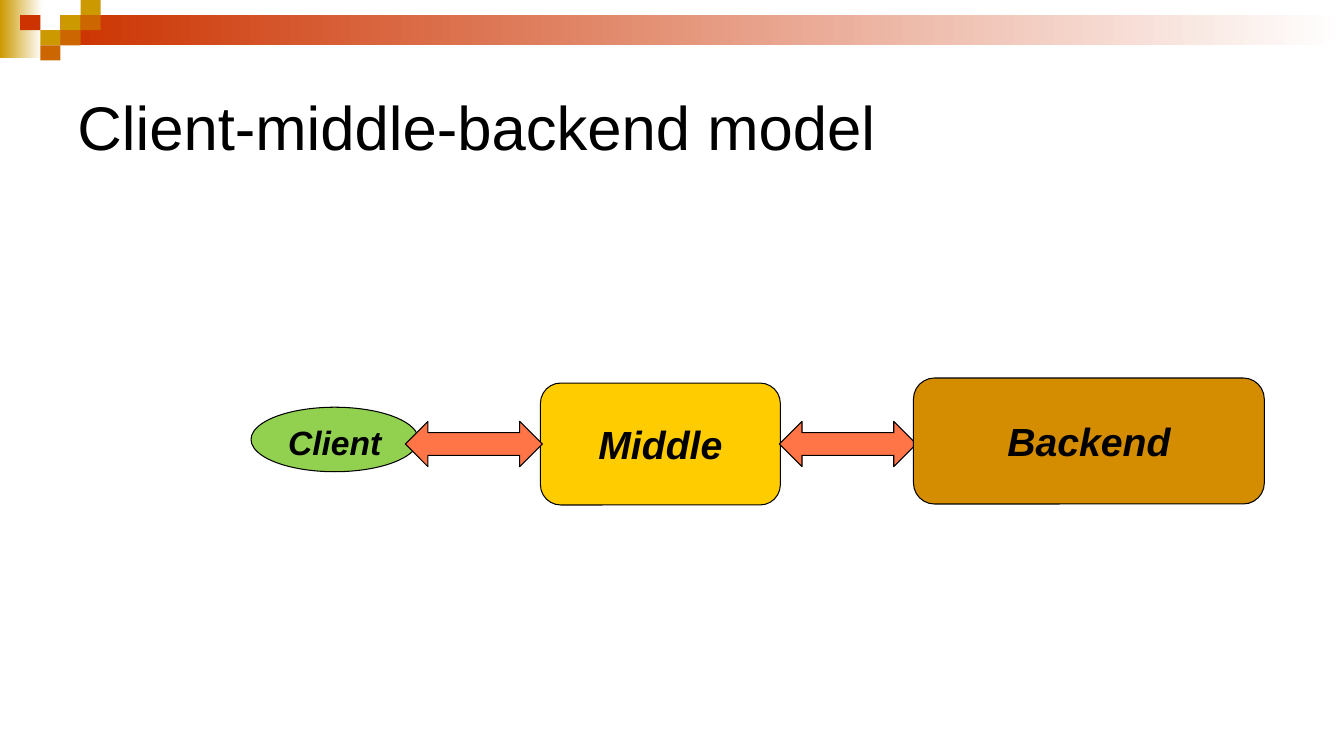
from dataclasses import dataclass

import pptx
import pptx.dml.color
import pptx.enum.shapes
import pptx.enum.text
import pptx.util

Inches = pptx.util.Inches
SHAPE = pptx.enum.shapes.MSO_SHAPE
ANCHOR = pptx.enum.text.MSO_ANCHOR
ALIGN = pptx.enum.text.PP_ALIGN


@dataclass(frozen=True)
class Theme:
    font: str = "Arial"
    black: str = "000000"
    white: str = "FFFFFF"
    gold: str = "CC9900"
    red: str = "CC3300"
    orange: str = "CC6600"
    client: str = "92D050"
    middle: str = "FFCC00"
    backend: str = "D48C00"
    arrow: str = "FF7547"
    title_size: int = 44
    tier_size: int = 28
    client_size: int = 24
    outline: float = 0.75


THEME = Theme()


def rgb(color):
    return pptx.dml.color.RGBColor.from_string(color)


def add_shape(slide, kind, box, color=None):
    sp = slide.shapes.add_shape(kind, *map(Inches, box))
    sp.shadow.inherit = False
    if color:
        sp.fill.solid()
        sp.fill.fore_color.rgb = rgb(color)
    return sp


def add_tile(slide, box, color):
    sp = add_shape(slide, SHAPE.RECTANGLE, box, color)
    sp.line.fill.background()


def add_fade(slide, box, color):
    sp = add_shape(slide, SHAPE.RECTANGLE, box)
    sp.line.fill.background()
    sp.fill.gradient()
    sp.fill.gradient_angle = 0
    for stop, shade in zip(sp.fill.gradient_stops, (color, THEME.white)):
        stop.color.rgb = rgb(shade)


def add_outlined(slide, kind, box, color):
    sp = add_shape(slide, kind, box, color)
    sp.line.color.rgb = rgb(THEME.black)
    sp.line.width = pptx.util.Pt(THEME.outline)
    return sp


def set_text(sp, text, size, align, anchor=ANCHOR.MIDDLE, strong=False):
    tf = sp.text_frame
    tf.word_wrap = True
    tf.vertical_anchor = anchor
    p = tf.paragraphs[0]
    p.text = text
    p.alignment = align
    p.font.name = THEME.font
    p.font.size = pptx.util.Pt(size)
    p.font.bold = strong
    p.font.italic = strong
    p.font.color.rgb = rgb(THEME.black)


def add_node(slide, kind, box, color, text, size, anchor=ANCHOR.MIDDLE):
    sp = add_outlined(slide, kind, box, color)
    set_text(sp, text, size, ALIGN.CENTER, anchor, strong=True)


def add_title(slide, text):
    sp = slide.shapes.add_textbox(*map(Inches, (0.67, 0.5, 12, 1.5)))
    set_text(sp, text, THEME.title_size, ALIGN.LEFT)


def add_banner(slide):
    add_fade(slide, (0, 0, 0.42, 0.58), THEME.gold)
    add_fade(slide, (0.6, 0.15, 12.73, 0.3), THEME.red)
    tile_w, tile_h = 0.2, 0.15
    tiles = (
        (3, 1, THEME.gold), (4, 0, THEME.gold), (4, 1, THEME.orange),
        (2, 2, THEME.gold), (1, 1, THEME.red), (3, 2, THEME.orange),
        (2, 3, THEME.orange),
    )
    for col, row, color in tiles:
        add_tile(slide, (col * tile_w, row * tile_h, tile_w, tile_h), color)


def main():
    prs = pptx.Presentation()
    prs.slide_width = Inches(13.33)
    prs.slide_height = Inches(7.5)
    slide = prs.slides.add_slide(prs.slide_layouts[6])

    add_banner(slide)
    add_title(slide, "Client-middle-backend model")
    add_node(slide, SHAPE.OVAL, (2.49, 4.04, 1.66, 0.64), THEME.client,
             "Client", THEME.client_size, ANCHOR.TOP)
    add_node(slide, SHAPE.ROUNDED_RECTANGLE, (5.36, 3.8, 2.38, 1.21),
             THEME.middle, "Middle", THEME.tier_size)
    for left in (7.73, 4.02):
        add_outlined(slide, SHAPE.LEFT_RIGHT_ARROW, (left, 4.18, 1.36, 0.45),
                     THEME.arrow)
    add_node(slide, SHAPE.ROUNDED_RECTANGLE, (9.06, 3.75, 3.48, 1.25),
             THEME.backend, "Backend", THEME.tier_size)

    prs.save("out.pptx")


if __name__ == "__main__":
    main()
